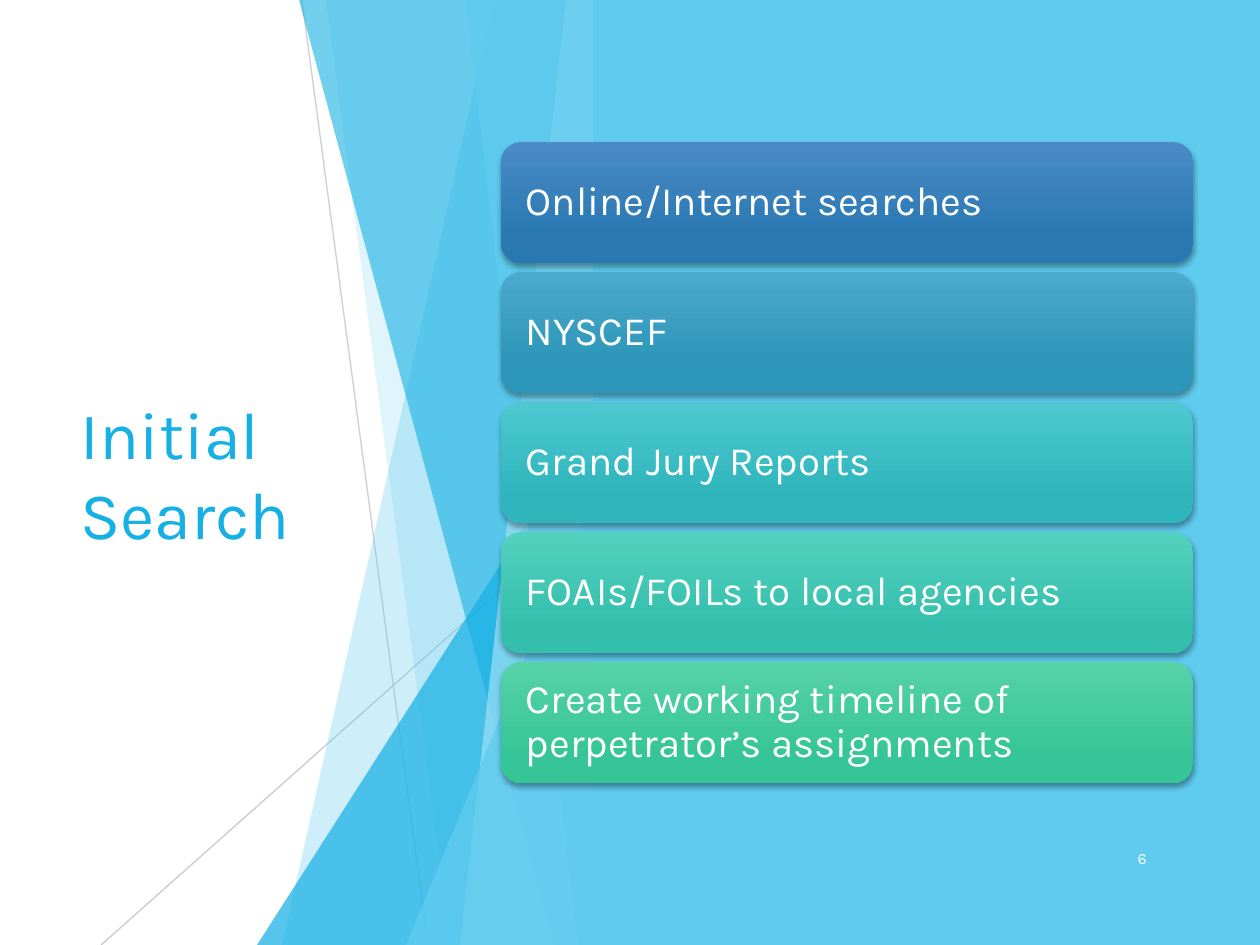
import pptx
import pptx.dml.color
import pptx.enum.shapes
import pptx.enum.text
import pptx.oxml
import pptx.oxml.ns
import pptx.util
from lxml import etree

RGB = pptx.dml.color.RGBColor
SHAPE = pptx.enum.shapes.MSO_SHAPE
ALIGN = pptx.enum.text.PP_ALIGN
ANCHOR = pptx.enum.text.MSO_ANCHOR
qn = pptx.oxml.ns.qn

# Content
TITLE = "Initial Search"
PAGE_NUMBER = "6"
CARDS = [  # text, top colour, bottom colour
    ("Online/Internet searches", RGB(0x4A, 0x8B, 0xC6), RGB(0x2A, 0x78, 0xB2)),
    ("NYSCEF", RGB(0x4B, 0xA9, 0xCC), RGB(0x2C, 0x96, 0xB8)),
    ("Grand Jury Reports", RGB(0x4D, 0xC8, 0xD0), RGB(0x2F, 0xB5, 0xBC)),
    ("FOAIs/FOILs to local agencies", RGB(0x52, 0xD1, 0xBE), RGB(0x34, 0xBF, 0xAC)),
    ("Create working timeline of perpetrator’s assignments",
     RGB(0x56, 0xD2, 0xA7), RGB(0x36, 0xC5, 0x96)),
]

# Look
FONT = "Karla"
WHITE = RGB(0xFF, 0xFF, 0xFF)
GREY = RGB(0xBF, 0xBF, 0xBF)
SKY = RGB(0x5F, 0xCB, 0xEF)
PALE = RGB(0x9F, 0xE0, 0xF5)
BLUE = RGB(0x17, 0xB0, 0xE4)

# Geometry in px
SCALE = 914400 / 126
WIDTH, HEIGHT = 1260, 945
PANEL_LEFT = 593
CARD_LEFT, CARD_TOP, CARD_WIDTH, CARD_HEIGHT, CARD_PITCH = 501, 142, 692, 121, 130
RAYS = [((302, 0), (428, HEIGHT), 75), ((PANEL_LEFT, 508), (101, HEIGHT), 80)]
# Facets end at the panel: a band has a top and a bottom x, a wedge a left x and a top y
FACETS = [
    ("band", 494, 282, SKY, 30),
    ("band", 326, 451, SKY, 20),
    ("wedge", 257, 420, BLUE, 72),
    ("band", 299, 554, BLUE, 60),
    ("band", 566, 460, PALE, 70),
    ("band", 465, 578, SKY, 65),
    ("wedge", 406, 495, SKY, 80),
]


def px(*lengths):
    return [pptx.util.Emu(round(length * SCALE)) for length in lengths]


def set_alpha(shape, percent):
    color = next(shape._element.spPr.iter(qn("a:srgbClr")))
    etree.SubElement(color, qn("a:alpha")).set("val", str(percent * 1000))


def paint(shape, color, alpha=100):
    shape.shadow.inherit = False
    shape.fill.solid()
    shape.fill.fore_color.rgb = color
    shape.line.fill.background()
    if alpha < 100:
        set_alpha(shape, alpha)


def write(box, text, size, color, align=ALIGN.LEFT, spacing=1.0, margin=None):
    frame = box.text_frame
    frame.text = text
    layout = {"word_wrap": True, "vertical_anchor": ANCHOR.MIDDLE,
              "auto_size": pptx.enum.text.MSO_AUTO_SIZE.NONE}
    if margin is not None:
        layout.update(margin_left=margin, margin_right=margin)
    for name, value in layout.items():
        setattr(frame, name, value)
    para = frame.paragraphs[0]
    para.alignment, para.line_spacing = align, spacing
    span = para.runs[0]
    for name, value in {"name": FONT, "size": pptx.util.Pt(size)}.items():
        setattr(span.font, name, value)
    span.font.color.rgb = color


def add_ray(page, start, end, alpha):
    ray = page.shapes.add_connector(
        pptx.enum.shapes.MSO_CONNECTOR.STRAIGHT, *px(*start, *end))
    ray.line.color.rgb = GREY
    ray.line.width = pptx.util.Pt(0.75)
    set_alpha(ray, alpha)
    etree.SubElement(ray._element.spPr, qn("a:effectLst"))


def add_facet(page, kind, first, second, color, alpha):
    if kind == "band":
        outline = page.shapes.build_freeform(first, 0, scale=SCALE)
        outline.add_line_segments(
            [(PANEL_LEFT, 0), (PANEL_LEFT, HEIGHT), (second, HEIGHT)], close=True)
        facet = outline.convert_to_shape()
    else:
        facet = page.shapes.add_shape(
            SHAPE.ISOSCELES_TRIANGLE,
            *px(first, second, PANEL_LEFT - first, HEIGHT - second))
        facet.adjustments[0] = 1
    paint(facet, color, alpha)


def add_card(page, top, text, light, dark):
    card = page.shapes.add_shape(
        SHAPE.ROUNDED_RECTANGLE, *px(CARD_LEFT, top, CARD_WIDTH, CARD_HEIGHT))
    card.line.fill.background()
    card.fill.gradient()
    card.fill.gradient_angle = 270
    for stop, position, color in zip(card.fill.gradient_stops, (0, 0.78), (light, dark)):
        stop.position = position
        stop.color.rgb = color
    # Soft shadow straight below
    card.shadow.inherit = False
    effects = card._element.spPr.find(qn("a:effectLst"))
    shadow = etree.SubElement(effects, qn("a:outerShdw"), blurRad="38100",
                              dist="25400", dir="5400000", rotWithShape="0")
    tint = etree.SubElement(shadow, qn("a:srgbClr"), val="000000")
    etree.SubElement(tint, qn("a:alpha"), val="35000")
    write(card, text, 23, WHITE, spacing=0.9, margin=px(19)[0])


def main():
    deck = pptx.Presentation()
    deck.slide_width, deck.slide_height = px(WIDTH, HEIGHT)
    page = deck.slides.add_slide(deck.slide_layouts[5])

    # Title
    title = page.shapes.title
    title.left, title.top, title.width, title.height = px(68, 190, 367, 565)
    write(title, TITLE, 38, BLUE)

    # Rays, facets and right-hand panel
    for ray in RAYS:
        add_ray(page, *ray)
    for facet in FACETS:
        add_facet(page, *facet)
    panel = page.shapes.add_shape(
        SHAPE.RECTANGLE, *px(PANEL_LEFT, 0, WIDTH - PANEL_LEFT, HEIGHT))
    paint(panel, SKY)

    # Page number
    number = page.shapes.add_textbox(*px(1089, 833, 70, 50))
    write(number, PAGE_NUMBER, 9, WHITE, align=ALIGN.RIGHT)

    # Cards
    for index, card in enumerate(CARDS):
        add_card(page, CARD_TOP + index * CARD_PITCH, *card)

    deck.save("out.pptx")


if __name__ == "__main__":
    main()
